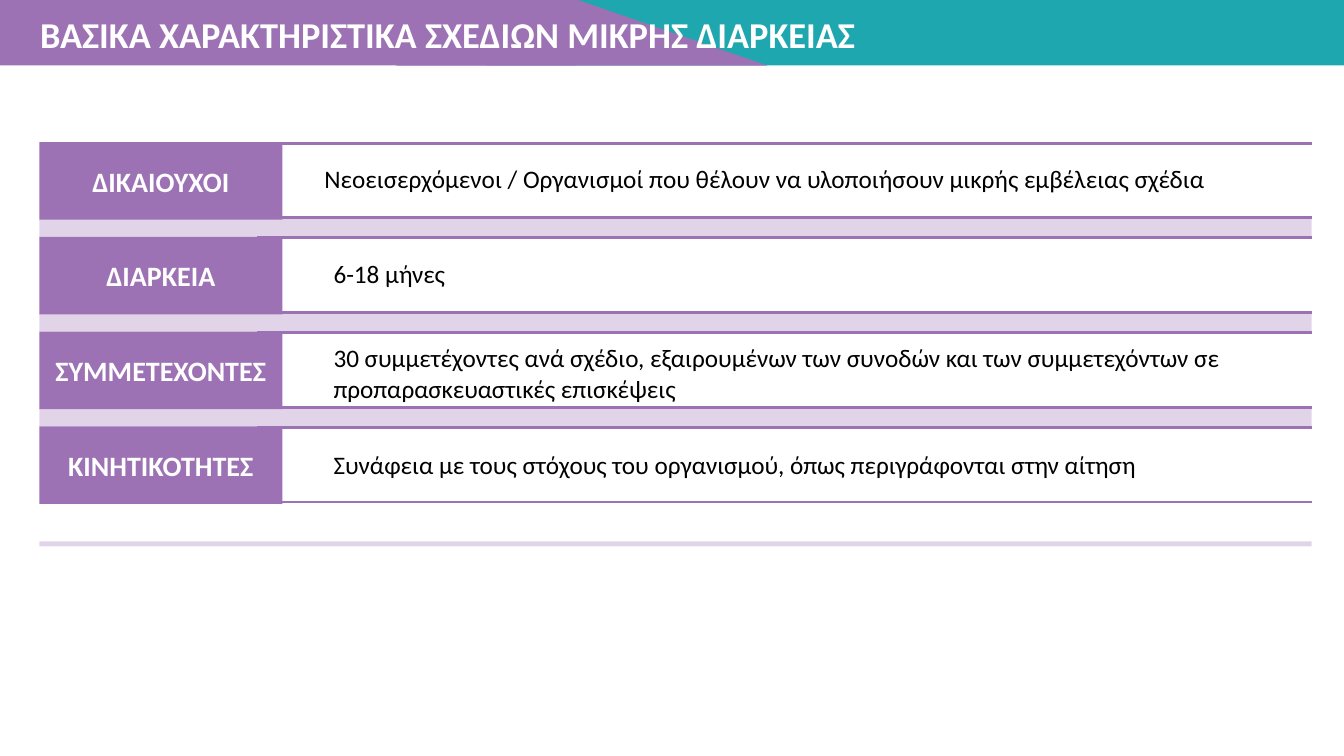
"""Build a slide on the main features of short-duration projects."""
from lxml import etree
from pptx import Presentation
from pptx.dml.color import RGBColor
from pptx.enum.shapes import MSO_CONNECTOR, MSO_SHAPE
from pptx.enum.text import MSO_ANCHOR, PP_ALIGN
from pptx.oxml.ns import qn
from pptx.util import Inches, Pt

RECTANGLE = MSO_SHAPE.RECTANGLE
TRIANGLE = MSO_SHAPE.ISOSCELES_TRIANGLE
STRAIGHT = MSO_CONNECTOR.STRAIGHT
LEFT, CENTER = PP_ALIGN.LEFT, PP_ALIGN.CENTER
TOP, MIDDLE = MSO_ANCHOR.TOP, MSO_ANCHOR.MIDDLE

THEME = {
    "font": "Calibri",
    "purple": RGBColor.from_string("9D72B5"),
    "teal": RGBColor.from_string("1EA7AE"),
    "white": RGBColor.from_string("FFFFFF"),
    "black": RGBColor.from_string("000000"),
    "title": 26,
    "label": 20,
    "body": 18,
    "rule": 2,
    "band_alpha": 30,
}

SLIDE_WIDTH, SLIDE_HEIGHT = 13.33, 7.5
HEADER_HEIGHT = 0.65
GRID_LEFT, GRID_RIGHT = 0.39, 13.01
GRID_TOP, ROW_PITCH = 1.41, 0.94
LABEL_WIDTH, LABEL_HEIGHT = 2.41, 0.77
RULE_LEFT = 2.55
RULE_OFFSETS = (0.75, 0.01)
BAND_OFFSET, BAND_HEIGHT = 0.76, 0.18
CLOSING_TOP, CLOSING_HEIGHT = 5.37, 0.05
TEXT_WIDTH = 9.1

ROWS = [
    ("ΔΙΚΑΙΟΥΧΟΙ", "Νεοεισερχόμενοι / Οργανισμοί που θέλουν να υλοποιήσουν μικρής εμβέλειας σχέδια",
     3.12, 0.16, 0.4),
    ("ΔΙΑΡΚΕΙΑ", "6-18 μήνες", 3.21, 0.16, 0.4),
    ("ΣΥΜΜΕΤΕΧΟΝΤΕΣ", "30 συμμετέχοντες ανά σχέδιο, εξαιρουμένων των συνοδών και των "
     "συμμετεχόντων σε προπαρασκευαστικές επισκέψεις", 3.21, 0.06, 0.71),
    ("ΚΙΝΗΤΙΚΟΤΗΤΕΣ", "Συνάφεια με τους στόχους του οργανισμού, όπως περιγράφονται στην αίτηση",
     3.21, 0.18, 0.4),
]

presentation = Presentation()
presentation.slide_width = Inches(SLIDE_WIDTH)
presentation.slide_height = Inches(SLIDE_HEIGHT)
slide = presentation.slides.add_slide(presentation.slide_layouts[6])


def add_block(kind, left, top, width, height, color, alpha=100):
    """Add a filled shape without outline or shadow."""
    shape = slide.shapes.add_shape(kind, Inches(left), Inches(top), Inches(width), Inches(height))
    shape.shadow.inherit = False
    shape.fill.solid()
    shape.fill.fore_color.rgb = color
    shape.line.fill.background()
    if alpha < 100:
        color_element = shape.fill._xPr.find(qn("a:solidFill"))[0]
        etree.SubElement(color_element, qn("a:alpha")).set("val", str(alpha * 1000))
    return shape


def write_text(shape, text, size, color, bold=False, align=LEFT, anchor=TOP):
    """Write one formatted paragraph into a shape."""
    frame = shape.text_frame
    frame.word_wrap = True
    frame.vertical_anchor = anchor
    paragraph = frame.paragraphs[0]
    paragraph.alignment = align
    run = paragraph.add_run()
    run.text = text
    run.font.name = THEME["font"]
    run.font.size = Pt(size)
    run.font.bold = bold
    run.font.color.rgb = color


add_block(RECTANGLE, 4.82, 0, SLIDE_WIDTH - 4.82, HEADER_HEIGHT, THEME["teal"])
add_block(RECTANGLE, 0, 0, 5.72, HEADER_HEIGHT, THEME["purple"])
header_slope = add_block(TRIANGLE, 3.93, 0, 3.68, HEADER_HEIGHT, THEME["purple"])
header_slope.adjustments[0] = 0.49
title = slide.shapes.add_textbox(Inches(0.3), Inches(0.07), Inches(8.37), Inches(0.54))
write_text(title, "ΒΑΣΙΚΑ ΧΑΡΑΚΤΗΡΙΣΤΙΚΑ ΣΧΕΔΙΩΝ ΜΙΚΡΗΣ ΔΙΑΡΚΕΙΑΣ",
           THEME["title"], THEME["white"], bold=True)

for index, (label, description, text_left, text_offset, text_height) in enumerate(ROWS):
    row_top = GRID_TOP + index * ROW_PITCH
    label_box = add_block(RECTANGLE, GRID_LEFT, row_top, LABEL_WIDTH, LABEL_HEIGHT, THEME["purple"])
    write_text(label_box, label, THEME["label"], THEME["white"],
               bold=True, align=CENTER, anchor=MIDDLE)
    for offset in RULE_OFFSETS:
        rule_top = Inches(row_top + offset)
        rule = slide.shapes.add_connector(STRAIGHT, Inches(RULE_LEFT), rule_top,
                                          Inches(GRID_RIGHT), rule_top)
        rule.line.color.rgb = THEME["purple"]
        rule.line.width = Pt(THEME["rule"])
        etree.SubElement(rule._element.spPr, qn("a:effectLst"))
    description_box = slide.shapes.add_textbox(Inches(text_left), Inches(row_top + text_offset),
                                               Inches(TEXT_WIDTH), Inches(text_height))
    write_text(description_box, description, THEME["body"], THEME["black"])

bands = [(GRID_TOP + index * ROW_PITCH + BAND_OFFSET, BAND_HEIGHT) for index in range(len(ROWS) - 1)]
for band_top, band_height in bands + [(CLOSING_TOP, CLOSING_HEIGHT)]:
    add_block(RECTANGLE, GRID_LEFT, band_top, GRID_RIGHT - GRID_LEFT, band_height,
              THEME["purple"], alpha=THEME["band_alpha"])

presentation.save("out.pptx")
